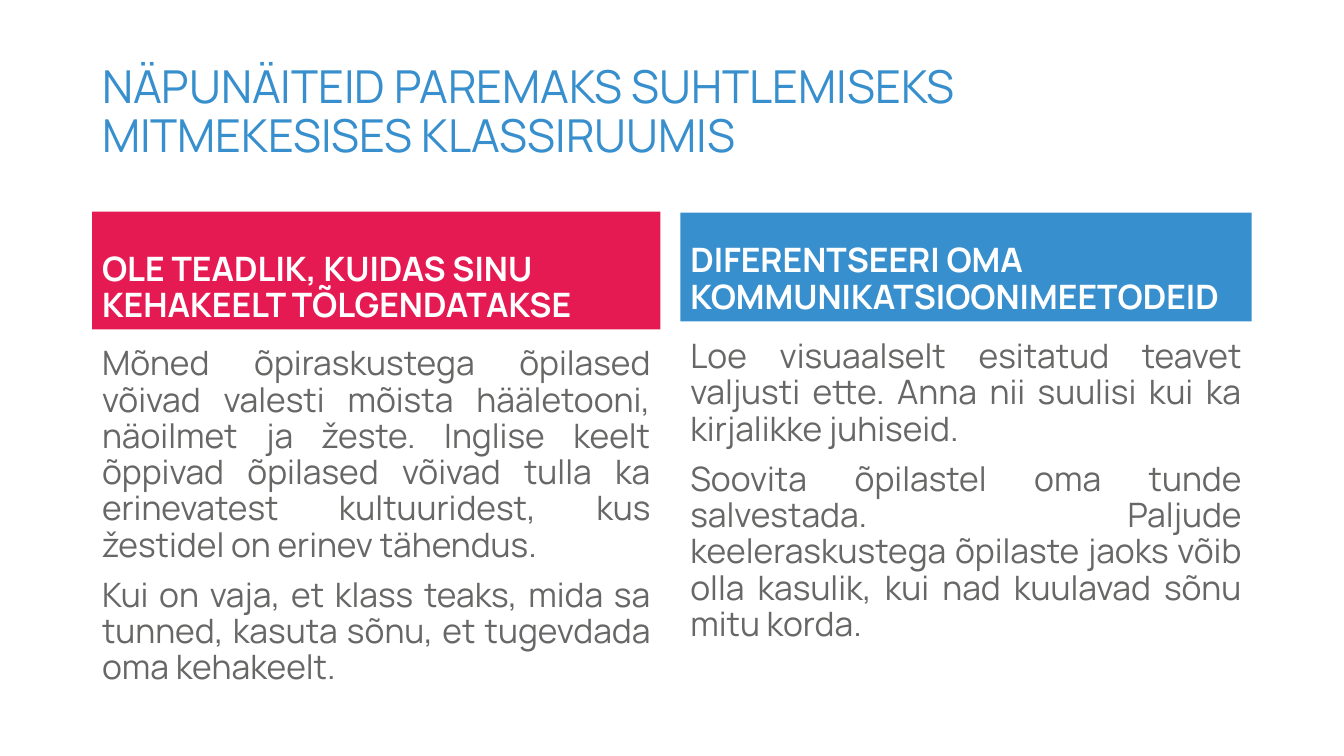
from pptx import Presentation
from pptx.dml.color import RGBColor
from pptx.enum.shapes import MSO_SHAPE as Shape
from pptx.enum.text import MSO_ANCHOR as Anchor, PP_ALIGN as Align
from pptx.util import Pt

BLUE, RED, GREY, WHITE = "378FCD", "E61A52", "676766", "FFFFFF"


def color(hex_code):
    return RGBColor.from_string(hex_code)


def write(box, texts, size, hex_code, anchor=Anchor.TOP, align=Align.LEFT, bold=False):
    """Fill a box with one paragraph per text, all in the same style."""
    frame = box.text_frame
    frame.word_wrap = True
    frame.vertical_anchor = anchor
    for index, text in enumerate(texts):
        para = frame.add_paragraph() if index else frame.paragraphs[0]
        para.text = text
        para.alignment = align
        para.line_spacing = 0.9
        para.space_before = Pt(10 if index else 0)
        for span in para.runs:
            span.font.name = "Manrope"
            span.font.size = Pt(size)
            span.font.bold = bold
            span.font.color.rgb = color(hex_code)


deck = Presentation()
deck.slide_width, deck.slide_height = Pt(960), Pt(540)
page = deck.slides.add_slide(deck.slide_layouts[6])

title = page.shapes.add_textbox(Pt(65.8), Pt(28.8), Pt(674), Pt(104.4))
write(title, ["NÄPUNÄITEID PAREMAKS SUHTLEMISEKS MITMEKESISES KLASSIRUUMIS"],
      32.4, BLUE, Anchor.MIDDLE)

# left, width, header top, header height, body top, fill, heading, paragraphs
columns = [
    (65.8, 406, 151.2, 84.2, 244.1, RED,
     "OLE TEADLIK, KUIDAS SINU KEHAKEELT TÕLGENDATAKSE",
     ["Mõned õpiraskustega õpilased võivad valesti mõista hääletooni, näoilmet "
      "ja žeste. Inglise keelt õppivad õpilased võivad tulla ka erinevatest "
      "kultuuridest, kus žestidel on erinev tähendus.",
      "Kui on vaja, et klass teaks, mida sa tunned, kasuta sõnu, et tugevdada "
      "oma kehakeelt."]),
    (486, 408, 151.8, 77.8, 239, BLUE,
     "DIFERENTSEERI OMA KOMMUNIKATSIOONIMEETODEID",
     ["Loe visuaalselt esitatud teavet valjusti ette. Anna nii suulisi kui ka "
      "kirjalikke juhiseid.",
      "Soovita õpilastel oma tunde salvestada. Paljude keeleraskustega õpilaste "
      "jaoks võib olla kasulik, kui nad kuulavad sõnu mitu korda."]),
]
body_bottom = 511.5

for left, width, top, height, body_top, fill, heading, paragraphs in columns:
    header = page.shapes.add_shape(Shape.RECTANGLE, Pt(left), Pt(top), Pt(width), Pt(height))
    header.shadow.inherit = False
    header.fill.solid()
    header.fill.fore_color.rgb = color(fill)
    header.line.fill.background()
    write(header, [heading], 24, WHITE, Anchor.BOTTOM, bold=True)

    body = page.shapes.add_textbox(Pt(left), Pt(body_top), Pt(width), Pt(body_bottom - body_top))
    write(body, paragraphs, 24, GREY, align=Align.JUSTIFY)

deck.save("out.pptx")
